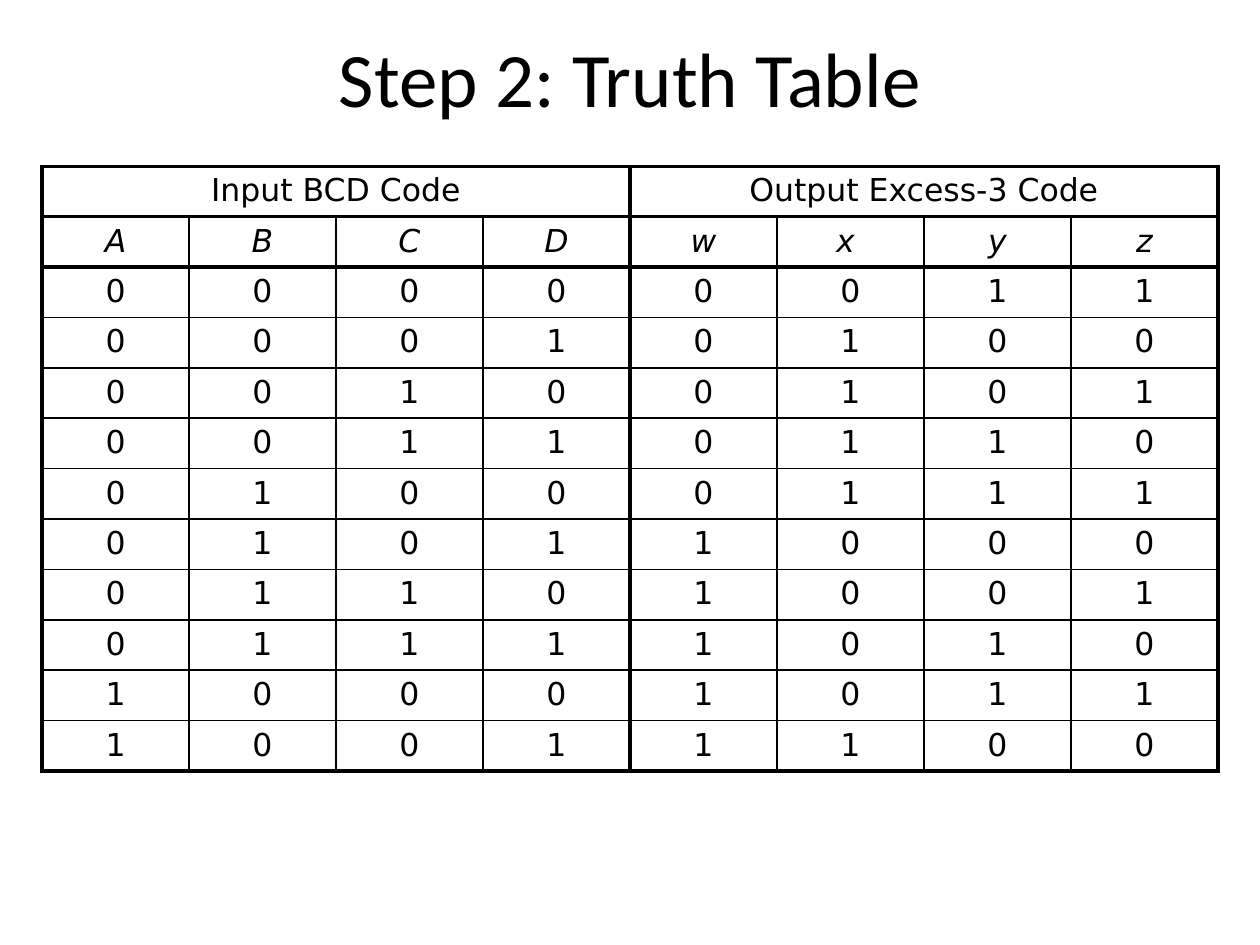
import pptx
import pptx.dml.color
import pptx.enum.text
import pptx.oxml
import pptx.oxml.ns
import pptx.util

Pt = pptx.util.Pt
BLACK = "000000"
THIN, THICK = 1, 2.25
BITS = 4
GROUPS = ["Input BCD Code", "Output Excess-3 Code"]
VARIABLES = ["A", "B", "C", "D", "w", "x ", "y", "z"]


def rgb(color):
    return pptx.dml.color.RGBColor.from_string(color)


def add_text(tf, text, size=18, font="DejaVu Sans", color=BLACK, italic=False):
    p = tf.paragraphs[0]
    p.alignment = pptx.enum.text.PP_ALIGN.CENTER
    r = p.add_run()
    r.text = text
    r.font.size = Pt(size)
    r.font.name = font
    r.font.italic = italic
    r.font.color.rgb = rgb(color)
    return p


def set_spacing(p, before, after):
    for tag, percent in (("spcBef", before), ("spcAft", after)):
        p._p.get_or_add_pPr().append(pptx.oxml.parse_xml(
            f'<a:{tag} {pptx.oxml.ns.nsdecls("a")}>'
            f'<a:spcPct val="{percent * 1000}"/></a:{tag}>'))


def set_borders(cell, widths, color=BLACK):
    for side, width in zip("LRTB", widths):
        cell._tc.get_or_add_tcPr().append(pptx.oxml.parse_xml(
            f'<a:ln{side} {pptx.oxml.ns.nsdecls("a")} w="{int(Pt(width))}">'
            f'<a:solidFill><a:srgbClr val="{color}"/></a:solidFill></a:ln{side}>'))


def border_widths(row, col):
    def column_edge(edge):
        return THICK if row == 0 or edge % BITS == 0 else THIN

    def row_edge(edge):
        return THICK if edge in (0, 1, 2, 12) else THIN

    return column_edge(col), column_edge(col + 1), row_edge(row), row_edge(row + 1)


def add_title(slide, text, left, top, width, height):
    sp = slide.shapes.title
    sp.left, sp.top, sp.width, sp.height = Pt(left), Pt(top), Pt(width), Pt(height)
    sp.text_frame.vertical_anchor = pptx.enum.text.MSO_ANCHOR.MIDDLE
    add_text(sp.text_frame, text, size=44, font="Calibri")


def add_truth_table(slide, left, top, width, height):
    group_row = [text for group in GROUPS for text in [group] + [""] * (BITS - 1)]
    code_rows = [f"{n:04b}{n + 3:04b}" for n in range(10)]
    rows = [group_row, VARIABLES] + code_rows
    table = slide.shapes.add_table(len(rows), len(VARIABLES), Pt(left), Pt(top),
                                   Pt(width), Pt(height)).table
    table.first_row = False
    table.horz_banding = False
    for i, row in enumerate(rows):
        for j, text in enumerate(row):
            cell = table.cell(i, j)
            set_borders(cell, border_widths(i, j))
            cell.fill.background()
            if text:
                p = add_text(cell.text_frame, text, italic=i == 1)
                set_spacing(p, 75, 25)
    for j in range(0, len(VARIABLES), BITS):
        table.cell(0, j).merge(table.cell(0, j + BITS - 1))


def main():
    prs = pptx.Presentation()
    prs.slide_width, prs.slide_height = Pt(720), Pt(540)
    slide = prs.slides.add_slide(prs.slide_layouts[5])
    add_title(slide, "Step 2: Truth Table", 24, 16, 672, 56)
    add_truth_table(slide, 24, 95, 672, 345.6)
    prs.save("out.pptx")


if __name__ == "__main__":
    main()
